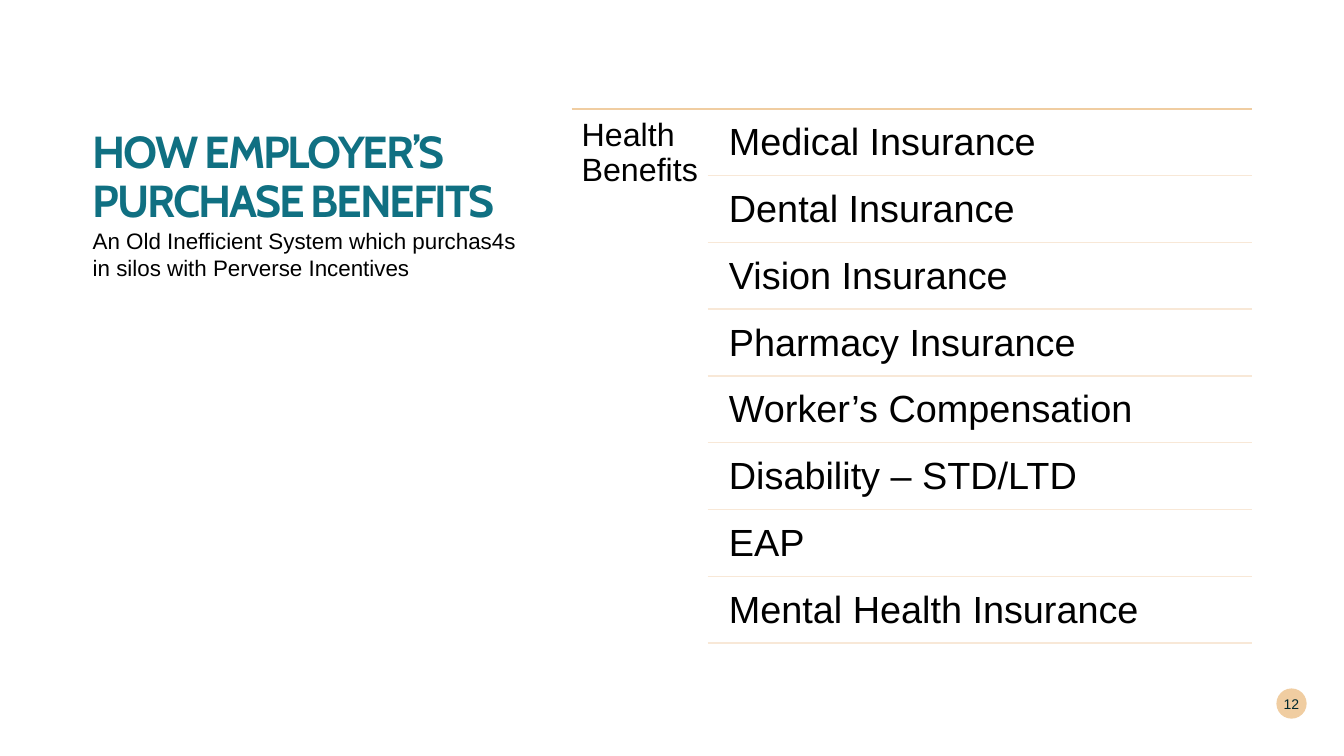
from pptx import Presentation
from pptx.dml.color import RGBColor
from pptx.enum.shapes import MSO_CONNECTOR, MSO_SHAPE
from pptx.enum.text import MSO_ANCHOR, MSO_AUTO_SIZE, PP_ALIGN
from pptx.oxml.ns import qn
from pptx.util import Inches, Pt

LEFT, CENTER = PP_ALIGN.LEFT, PP_ALIGN.CENTER
TOP, MIDDLE, BOTTOM = MSO_ANCHOR.TOP, MSO_ANCHOR.MIDDLE, MSO_ANCHOR.BOTTOM
NO_AUTOFIT, STRAIGHT, OVAL = MSO_AUTO_SIZE.NONE, MSO_CONNECTOR.STRAIGHT, MSO_SHAPE.OVAL

THEME = {
    "teal": "107082", "black": "000000", "ink": "00292E",
    "sand": "F0CDA1", "pale": "F8E8D7",
    "heading": "Cabin", "body": "Arial",
    "title": 32, "subtitle": 16, "group": 23, "item": 27, "number": 10,
}

BENEFITS = [
    "Medical Insurance", "Dental Insurance", "Vision Insurance",
    "Pharmacy Insurance", "Worker’s Compensation", "Disability – STD/LTD",
    "EAP", "Mental Health Insurance",
]

# Grid: text column on the left, benefit list on the right
TEXT_X, TEXT_W, SPLIT_Y = 0.92, 4.3, 2.25
LIST_X, ITEM_X, LIST_RIGHT = 5.67, 7.02, 12.42
LIST_Y, LIST_H = 1.08, 5.33
ROW_GAP, ROW_INDENT = 0.03, 0.1
ROW_X = ITEM_X + ROW_INDENT
PITCH = 5.3 / len(BENEFITS)


def write(sp, text, size, color="black", font="body", anchor=TOP,
          align=LEFT, inset=0, **spacing):
    """Fill a shape with one paragraph; spacing holds paragraph attributes."""
    tf = sp.text_frame
    frame = {"word_wrap": True, "auto_size": NO_AUTOFIT, "vertical_anchor": anchor}
    for side in ("left", "right", "top", "bottom"):
        frame["margin_" + side] = Inches(inset)
    for name, value in frame.items():
        setattr(tf, name, value)
    p = tf.paragraphs[0]
    for name, value in {"alignment": align, **spacing}.items():
        setattr(p, name, value)
    r = p.add_run()
    r.text = text
    r.font.name = THEME[font]
    r.font.size = Pt(THEME[size])
    r.font.color.rgb = RGBColor.from_string(THEME[color])
    return r


def add_rule(x, y, color):
    line = s.shapes.add_connector(STRAIGHT, Inches(x), Inches(y), Inches(LIST_RIGHT), Inches(y))
    line.line.color.rgb = RGBColor.from_string(THEME[color])
    line.line.width = Pt(1)
    sp_pr = line._element.spPr
    sp_pr.append(sp_pr.makeelement(qn("a:effectLst"), {}))


prs = Presentation()
prs.slide_width, prs.slide_height = Inches(13.33), Inches(7.5)
s = prs.slides.add_slide(prs.slide_layouts[5])

# Title and subtitle meet at SPLIT_Y
title = s.shapes.title
place = {"left": TEXT_X, "top": 0.5, "width": TEXT_W, "height": SPLIT_Y - 0.5}
for name, value in place.items():
    setattr(title, name, Inches(value))
r = write(title, "HOW EMPLOYER’S PURCHASE BENEFITS", "title", "teal", "heading",
          BOTTOM, line_spacing=0.9)
r.font.bold = True
r.font._element.set("spc", "-150")

subtitle = s.shapes.add_textbox(Inches(TEXT_X), Inches(SPLIT_Y), Inches(TEXT_W), Inches(0.89))
write(subtitle, "An Old Inefficient System which purchas4s in silos with Perverse Incentives",
      "subtitle", space_after=Pt(10))

# Slide number badge
badge = s.shapes.add_shape(OVAL, Inches(12.66), Inches(6.83), Inches(0.3), Inches(0.3))
badge.shadow.inherit = False
badge.fill.solid()
badge.fill.fore_color.rgb = RGBColor.from_string(THEME["sand"])
badge.line.fill.background()
write(badge, "12", "number", "ink", anchor=MIDDLE, align=CENTER)

# Benefit list: group label up to the row text, then one ruled row per benefit
add_rule(LIST_X, LIST_Y, "sand")
group = s.shapes.add_textbox(Inches(LIST_X), Inches(LIST_Y), Inches(ROW_X - LIST_X), Inches(LIST_H))
write(group, "Health Benefits", "group", inset=0.1, line_spacing=0.9)

for i, benefit in enumerate(BENEFITS):
    y = LIST_Y + ROW_GAP + i * PITCH
    row_h = PITCH - ROW_GAP
    row = s.shapes.add_textbox(Inches(ROW_X), Inches(y), Inches(LIST_RIGHT - ROW_X), Inches(row_h))
    write(row, benefit, "item", inset=0.11, line_spacing=0.9)
    add_rule(ITEM_X, y + row_h, "pale")

prs.save("out.pptx")
